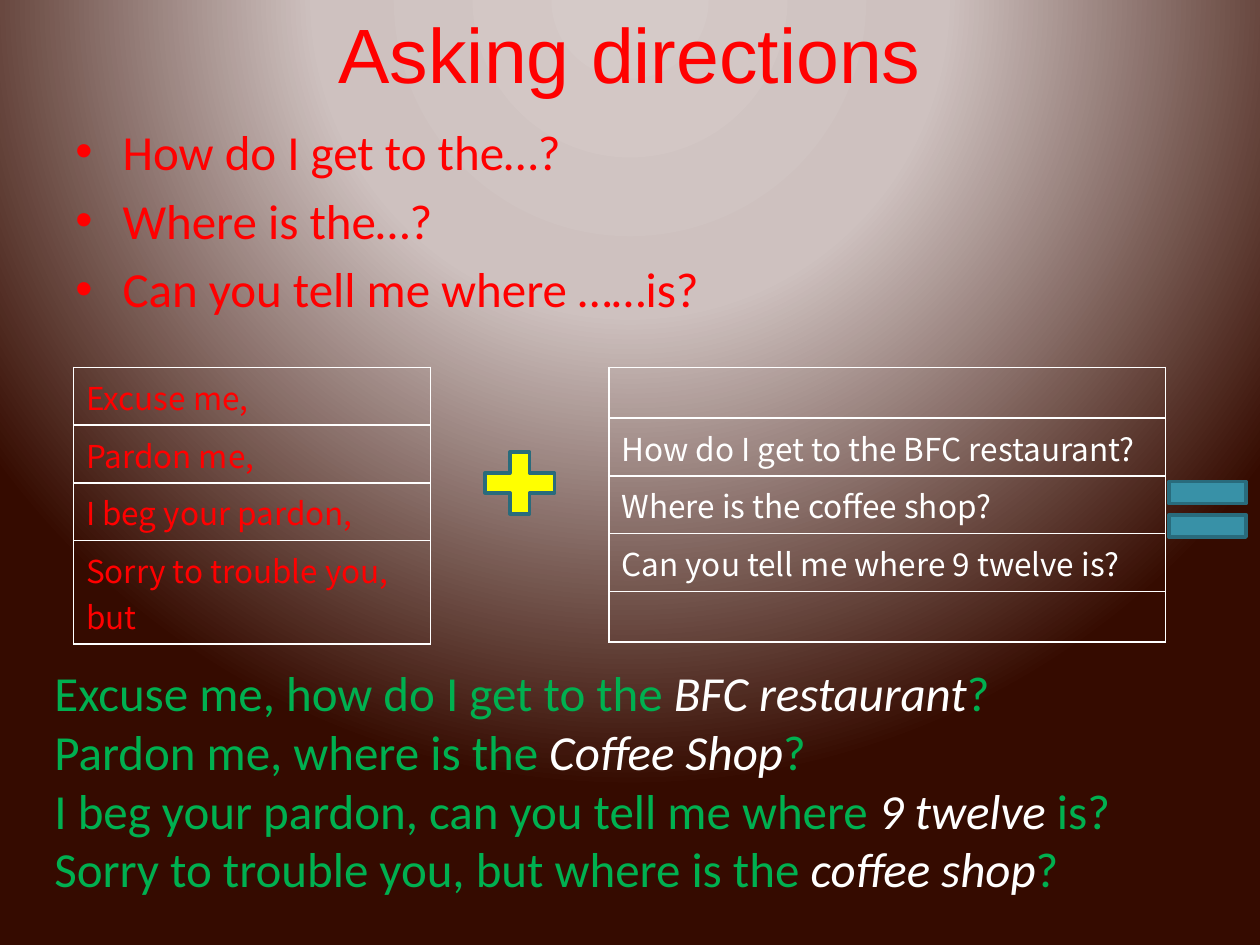
from pptx import Presentation
from pptx.dml.color import RGBColor
from pptx.enum.shapes import MSO_SHAPE
from pptx.enum.text import MSO_ANCHOR, MSO_AUTO_SIZE, PP_ALIGN
from pptx.oxml import parse_xml
from pptx.oxml.ns import nsdecls, qn
from pptx.util import Pt

PLUS, EQUAL = MSO_SHAPE.MATH_PLUS, MSO_SHAPE.MATH_EQUAL
MIDDLE, CENTER = MSO_ANCHOR.MIDDLE, PP_ALIGN.CENTER
GROW = MSO_AUTO_SIZE.SHAPE_TO_FIT_TEXT

RED = RGBColor(0xFF, 0, 0)
GREEN = RGBColor(0, 0xB0, 0x50)
WHITE = RGBColor(0xFF, 0xFF, 0xFF)
YELLOW = RGBColor(0xFF, 0xFF, 0)
TEAL = RGBColor(0x38, 0x91, 0xA7)
EDGE = RGBColor(0x29, 0x6B, 0x7C)

TITLE = "Asking directions"
ASKS = ["How do I get to the…?", "Where is the…?", "Can you tell me where ……is?"]
TABLES = [
    (42, 204, RED, [("Excuse me,", 33), ("Pardon me,", 33),
                    ("I beg your pardon,", 33), ("Sorry to trouble you, but", 59)]),
    (348, 318, WHITE, [("", 29), ("How do I get to the BFC restaurant?", 33),
                       ("Where is the coffee shop?", 33),
                       ("Can you tell me where 9 twelve is?", 33), ("", 29)]),
]
SIGNS = [(PLUS, (270, 252, 54, 48), YELLOW), (EQUAL, (660, 264, 60, 54), TEAL)]
LINES = [
    ("Excuse me, how do I get to the ", "BFC restaurant", "?"),
    ("Pardon me, where is the ", "Coffee Shop", "?"),
    ("I beg your pardon, can you tell me where ", "9 twelve ", "is?"),
    ("Sorry to trouble you, but where is the ", "coffee shop", "?"),
]
STOPS = [(0, "D5CAC8"), (40, "CEC1BF"), (100, "350B00")]


def style(run, face, size, color, slant=False):
    font = run.font
    font.name, font.size, font.italic = face, Pt(size), slant
    font.color.rgb = color


def paint(slide):
    slide.background.fill.solid()
    solid = next(slide.element.iter(qn("a:solidFill")))
    stops = "".join(f'<a:gs pos="{pos * 1000}"><a:srgbClr val="{color}"/></a:gs>'
                    for pos, color in STOPS)
    grad = parse_xml(
        f'<a:gradFill {nsdecls("a")} rotWithShape="1"><a:gsLst>{stops}</a:gsLst>'
        '<a:path path="circle"><a:fillToRect l="50000" t="-80000" r="50000" b="180000"/>'
        '</a:path></a:gradFill>')
    solid.getparent().replace(solid, grad)


def add_box(slide, *area):
    frame = slide.shapes.add_textbox(*map(Pt, area)).text_frame
    frame.word_wrap = True
    return frame


def add_para(frame, first):
    return frame.paragraphs[0] if first else frame.add_paragraph()


def add_asks(slide):
    frame = add_box(slide, 36, 66, 648, 416)
    for i, ask in enumerate(ASKS):
        para = add_para(frame, i == 0)
        para.text = ask
        para.space_before = Pt(5.6)
        style(para.runs[0], "Calibri", 28, RED)
        props = para._p.get_or_add_pPr()
        props.set("marL", str(Pt(27)))
        props.set("indent", str(Pt(-27)))
        props.append(parse_xml(f'<a:buFont {nsdecls("a")} typeface="Arial"/>'))
        props.append(parse_xml(f'<a:buChar {nsdecls("a")} char="•"/>'))


def add_grid(slide, left, width, color, rows):
    high = sum(row[1] for row in rows)
    table = slide.shapes.add_table(len(rows), 1, Pt(left), Pt(210), Pt(width), Pt(high)).table
    table.first_row = table.horz_banding = False
    for i, (text, size) in enumerate(rows):
        table.rows[i].height = Pt(size)
        cell = table.cell(i, 0)
        cell.text = text
        cell.fill.background()
        for run in cell.text_frame.paragraphs[0].runs:
            style(run, "Noto Sans CJK KR", 18, color)
        props = cell._tc.get_or_add_tcPr()
        for j, side in enumerate("LRTB"):
            props.insert(j, parse_xml(
                f'<a:ln{side} {nsdecls("a")} w="{Pt(1)}"><a:solidFill>'
                f'<a:srgbClr val="{WHITE}"/></a:solidFill></a:ln{side}>'))


def add_sign(slide, kind, area, color):
    sign = slide.shapes.add_shape(kind, *map(Pt, area))
    sign.shadow.inherit = False
    sign.fill.solid()
    sign.fill.fore_color.rgb = color
    sign.line.color.rgb = EDGE
    sign.line.width = Pt(2)


def add_lines(slide):
    frame = add_box(slide, 24, 375, 636, 165)
    frame.auto_size = GROW
    for i, parts in enumerate(LINES):
        para = add_para(frame, i == 0)
        for j, part in enumerate(parts):
            run = para.add_run()
            run.text = part
            place = j == 1
            style(run, "Calibri", 28, WHITE if place else GREEN, place)


def main():
    deck = Presentation()
    deck.slide_width, deck.slide_height = Pt(720), Pt(540)
    slide = deck.slides.add_slide(deck.slide_layouts[5])
    paint(slide)
    title = slide.shapes.title
    title.left, title.top, title.width, title.height = map(Pt, (36, 0, 648, 60))
    frame = title.text_frame
    frame.text = TITLE
    frame.vertical_anchor = MIDDLE
    frame.paragraphs[0].alignment = CENTER
    style(frame.paragraphs[0].runs[0], "Arial", 44, RED)
    add_asks(slide)
    for grid in TABLES:
        add_grid(slide, *grid)
    for sign in SIGNS:
        add_sign(slide, *sign)
    add_lines(slide)
    deck.save("out.pptx")


if __name__ == "__main__":
    main()
